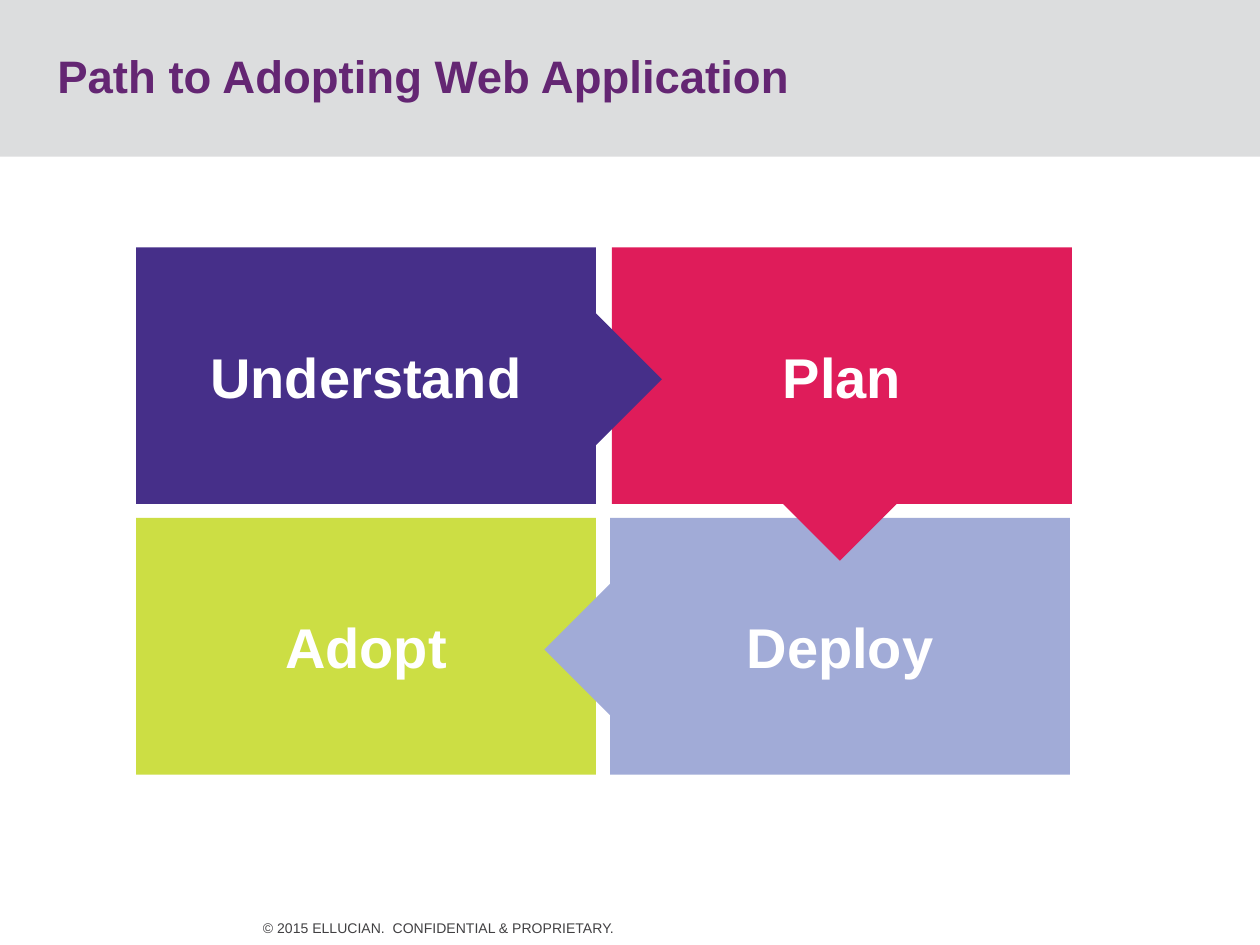
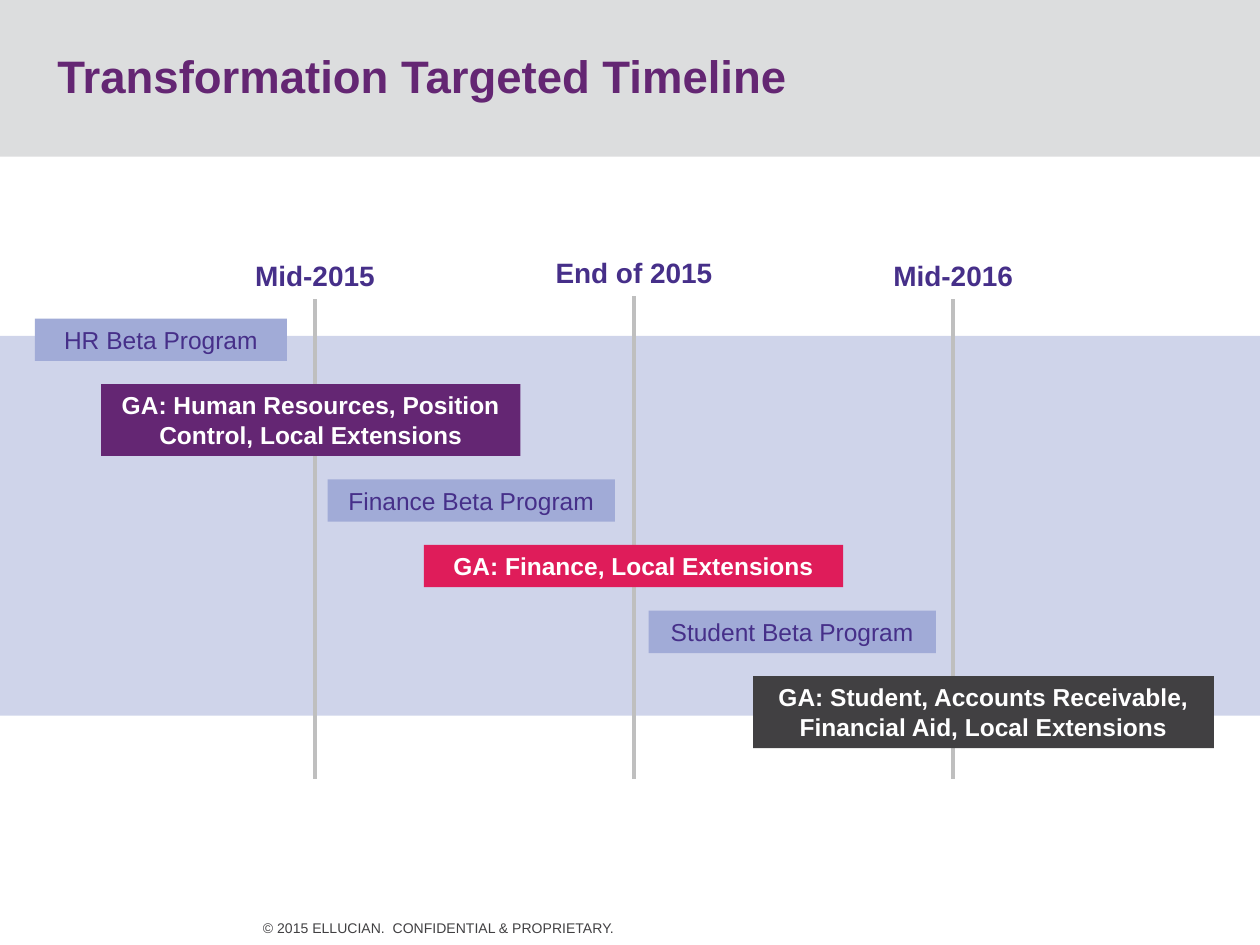
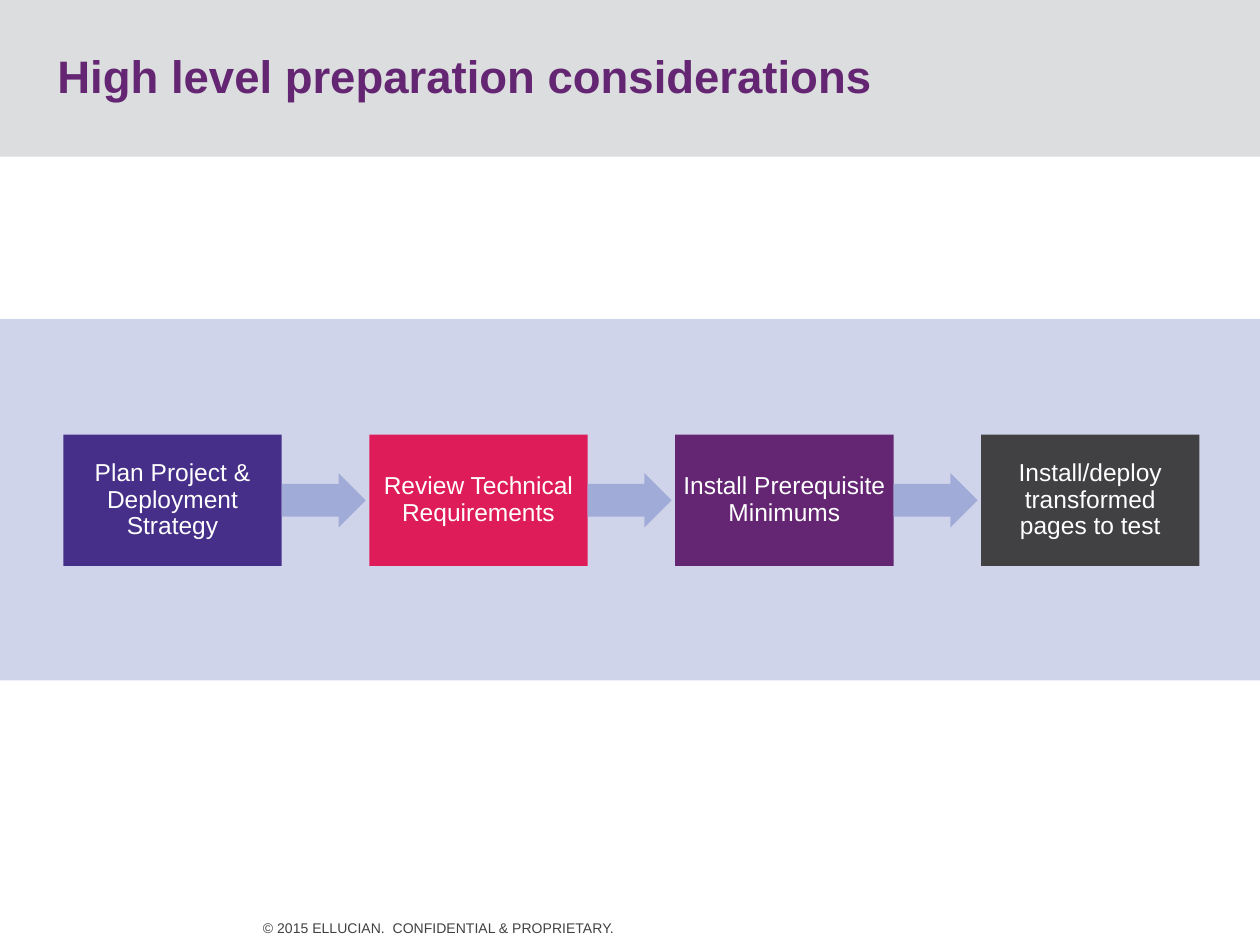
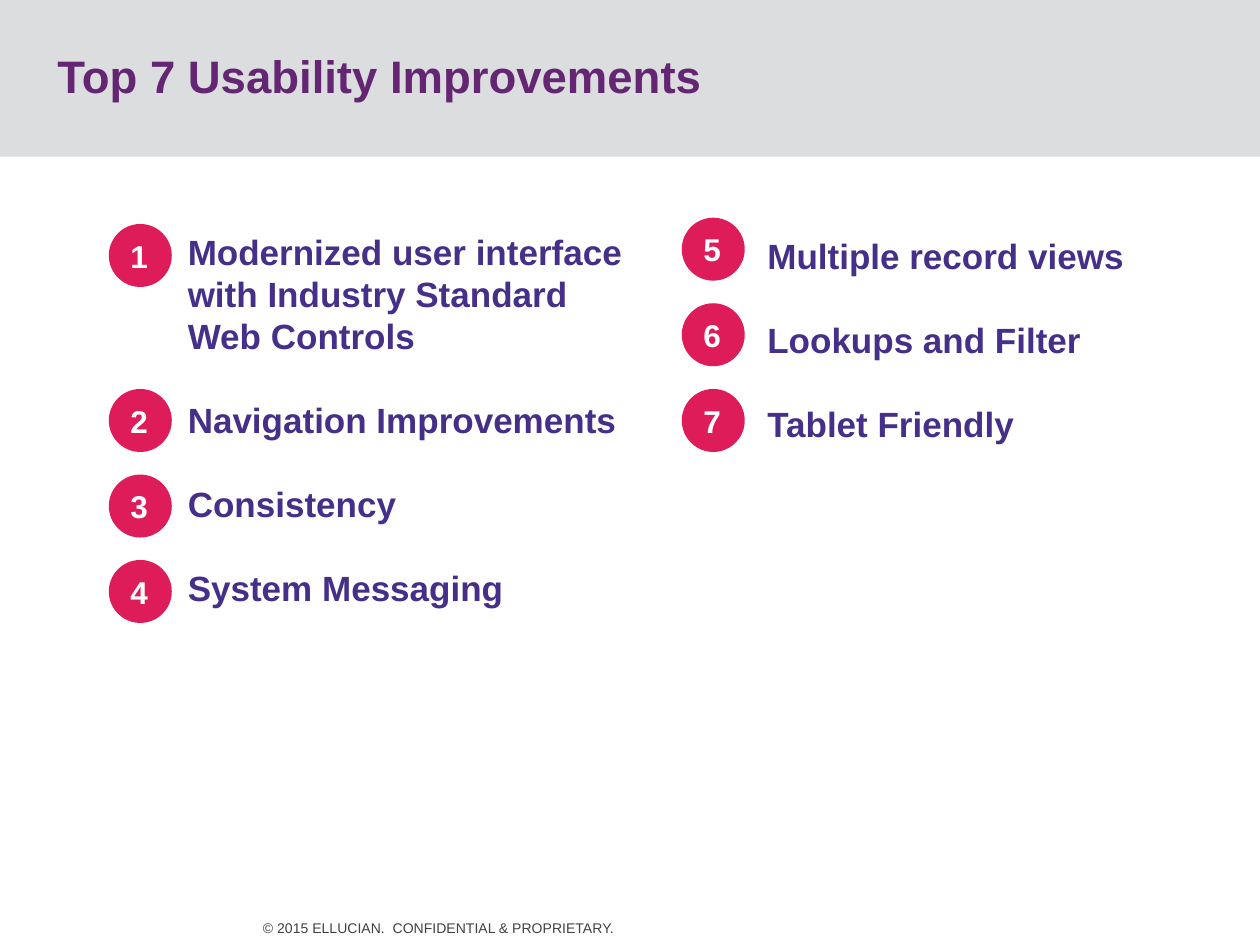
"""Build a four-slide deck about adopting a new application."""
from lxml import etree
from pptx import Presentation
from pptx import util as u
from pptx.dml import color as colors
from pptx.enum import shapes, text
from pptx.oxml import ns

FONT = "Arial"
INDIGO, PURPLE, PINK = "462F89", "642673", "DF1C5A"
LIME, LAVENDER, CHARCOAL = "CCDE44", "A1ABD7", "414042"
BAND_GRAY, LINE_GRAY, WHITE = "DCDDDE", "BFBFBF", "FFFFFF"
PAGE_WIDTH, PAGE_HEIGHT = 720, 540
FOOTER = "© 2015 ELLUCIAN.  CONFIDENTIAL & PROPRIETARY."

KIND = shapes.MSO_SHAPE
LEFT, CENTER = text.PP_ALIGN.LEFT, text.PP_ALIGN.CENTER
TOP, MIDDLE, BOTTOM = (text.MSO_ANCHOR.TOP, text.MSO_ANCHOR.MIDDLE,
                       text.MSO_ANCHOR.BOTTOM)


def rgb(code):
    """Turn a hex string into a colour."""
    return colors.RGBColor.from_string(code)


def points(*lengths):
    """Turn plain numbers into lengths in points."""
    return [u.Pt(length) for length in lengths]


def write(box, words, size, color, bold=False, align=CENTER, anchor=TOP,
          inset=None, wrap=True, line_spacing=None, gap=0):
    """Fill a shape with styled text, one paragraph for each line."""
    frame = box.text_frame
    frame.text = words
    frame.word_wrap = wrap
    frame.vertical_anchor = anchor
    if inset is not None:
        frame.margin_left = frame.margin_right = u.Pt(inset)
        frame.margin_top = frame.margin_bottom = u.Pt(inset)
    for index, para in enumerate(frame.paragraphs):
        para.alignment = align
        if line_spacing:
            para.line_spacing = line_spacing
        if index and gap:
            para.space_before = u.Pt(gap)
        for span in para.runs:
            span.font.name = FONT
            span.font.size = u.Pt(size)
            span.font.bold = bold
            span.font.color.rgb = rgb(color)


def add_text(page, place, words, size, color, **style):
    """Add a text box."""
    box = page.shapes.add_textbox(*points(*place))
    write(box, words, size, color, **style)


def add_block(page, place, fill, kind=KIND.RECTANGLE, rotation=0):
    """Add a flat filled shape without an outline."""
    block = page.shapes.add_shape(kind, *points(*place))
    block.shadow.inherit = False
    block.fill.solid()
    block.fill.fore_color.rgb = rgb(fill)
    block.line.fill.background()
    block.rotation = rotation
    return block


def add_pale_band(page, top, height):
    """Add a half-transparent band across the whole slide."""
    band = add_block(page, (0, top, PAGE_WIDTH, height), LAVENDER)
    fill = band.fill._xPr.find(ns.qn("a:solidFill"))
    etree.SubElement(fill[0], ns.qn("a:alpha"), val="51000")


def add_milestone(page, center, top, label):
    """Add a date label with its vertical line."""
    add_text(page, (center - 58, top, 116, 26.6), label, 16, INDIGO, bold=True)
    line = page.shapes.add_connector(
        shapes.MSO_CONNECTOR.STRAIGHT,
        *points(center, top + 27, center, 445))
    line.line.color.rgb = rgb(LINE_GRAY)
    line.line.width = u.Pt(2.25)
    etree.SubElement(line._element.spPr, ns.qn("a:effectLst"))


def add_text_shadow(span):
    """Give a run a small dark shadow."""
    fill = span.font._element.find(ns.qn("a:solidFill"))
    effects = etree.Element(ns.qn("a:effectLst"))
    shadow = etree.SubElement(effects, ns.qn("a:outerShdw"),
                              dist="12700", dir="2700000")
    etree.SubElement(shadow, ns.qn("a:srgbClr"), val="000000")
    fill.addnext(effects)


def add_number(page, left, top, number):
    """Add a numbered circle."""
    circle = add_block(page, (left, top, 36, 36), PINK, KIND.OVAL)
    write(circle, str(number), 18, WHITE, bold=True, align=LEFT, anchor=MIDDLE)
    add_text_shadow(circle.text_frame.paragraphs[0].runs[0])


def add_page(deck, title):
    """Add a slide with the shared title band and footer."""
    page = deck.slides.add_slide(deck.slide_layouts[6])
    add_block(page, (0, 0, PAGE_WIDTH, 89.5), BAND_GRAY)
    add_text(page, (150.3, 525.6, 350.6, 9.4), FOOTER, 8, CHARCOAL,
             align=LEFT, anchor=BOTTOM, inset=0)
    add_text(page, (32.8, 9, 654.5, 72.7), title, 26, PURPLE, bold=True,
             align=LEFT, anchor=MIDDLE, inset=0, line_spacing=0.85)
    return page


def build_path(deck):
    """Show the four steps as a cycle of blocks."""
    page = add_page(deck, "Path to Adopting Web Application")
    steps = [("Understand", 77.75, 141.3, INDIGO), ("Plan", 349.7, 141.3, PINK),
             ("Adopt", 77.75, 296, LIME), ("Deploy", 348.6, 296, LAVENDER)]
    for label, left, top, fill in steps:
        block = add_block(page, (left, top, 262.8, 146.7), fill)
        write(block, label, 32, WHITE, bold=True, anchor=MIDDLE, wrap=False)
    pointers = [(311, 332.8, 116.6, LAVENDER, 180), (440, 242.1, 80, PINK, 90),
                (298.3, 178.4, 80, INDIGO, 0)]
    for left, top, width, fill, rotation in pointers:
        add_block(page, (left, top, width, 76.7), fill, KIND.PENTAGON, rotation)


def build_timeline(deck):
    """Show the programs along three dates."""
    page = add_page(deck, "Transformation Targeted Timeline")
    add_pale_band(page, 192, 217)
    milestones = [("Mid-2015", 180, 144), ("End of 2015", 362.3, 142.3),
                  ("Mid-2016", 544.7, 144)]
    for label, center, top in milestones:
        add_milestone(page, center, top, label)
    programs = [
        ("HR Beta Program", 20, 182.1, 144, LAVENDER),
        ("GA: Human Resources, Position Control, Local Extensions",
         57.8, 219.5, 239.6, PURPLE),
        ("Finance Beta Program", 187.2, 273.9, 164.2, LAVENDER),
        ("GA: Finance, Local Extensions", 242.2, 311.4, 239.6, PINK),
        ("Student Beta Program", 370.6, 349, 164.2, LAVENDER),
        ("GA: Student, Accounts Receivable, Financial Aid, Local Extensions",
         430.3, 386.4, 263.3, CHARCOAL)]
    for label, left, top, width, fill in programs:
        beta = fill == LAVENDER
        height = 41.1 if len(label) > 30 else 24.2
        block = add_block(page, (left, top, width, height), fill)
        write(block, label, 14, INDIGO if beta else WHITE, bold=not beta)


def build_preparation(deck):
    """Show the preparation steps as a row of blocks and arrows."""
    page = add_page(deck, "High level preparation considerations")
    add_pale_band(page, 182.4, 206.4)
    steps = [("Plan Project & Deployment Strategy", INDIGO),
             ("Review Technical Requirements", PINK),
             ("Install Prerequisite Minimums", PURPLE),
             ("Install/deploy transformed pages to test", CHARCOAL)]
    width, pitch = 124.8, 174.8
    for index, (label, fill) in enumerate(steps):
        left = 36.2 + index * pitch
        block = add_block(page, (left, 248.4, width, 75), fill)
        write(block, label, 14, WHITE, anchor=MIDDLE, inset=4,
              line_spacing=0.9)
        if index < len(steps) - 1:
            arrow = add_block(page, (left + width, 270.4, 48, 31), LAVENDER,
                              KIND.RIGHT_ARROW)
            arrow.adjustments[0] = 0.6


def build_improvements(deck):
    """List the seven improvements in two numbered columns."""
    page = add_page(deck, "Top 7 Usability Improvements")
    columns = [
        ((107.3, 131.8, 282.2, 126), 62.2, [128, 222.3, 271.2, 320],
         ["Modernized user interface with Industry Standard\vWeb Controls",
          "Navigation Improvements", "Consistency", "System Messaging"]),
        ((438.5, 133.9, 281.5, 145.4), 389.6, [124.4, 173.3, 222.3],
         ["Multiple record views", "Lookups and Filter", "Tablet Friendly"])]
    number = 0
    for place, circle_left, circle_tops, items in columns:
        add_text(page, place, "\n".join(items), 20, INDIGO, bold=True,
                 align=LEFT, inset=0, gap=24)
        for top in circle_tops:
            number += 1
            add_number(page, circle_left, top, number)


def main():
    """Build and save the deck."""
    deck = Presentation()
    deck.slide_width, deck.slide_height = points(PAGE_WIDTH, PAGE_HEIGHT)
    build_path(deck)
    build_timeline(deck)
    build_preparation(deck)
    build_improvements(deck)
    deck.save("out.pptx")


if __name__ == "__main__":
    main()
